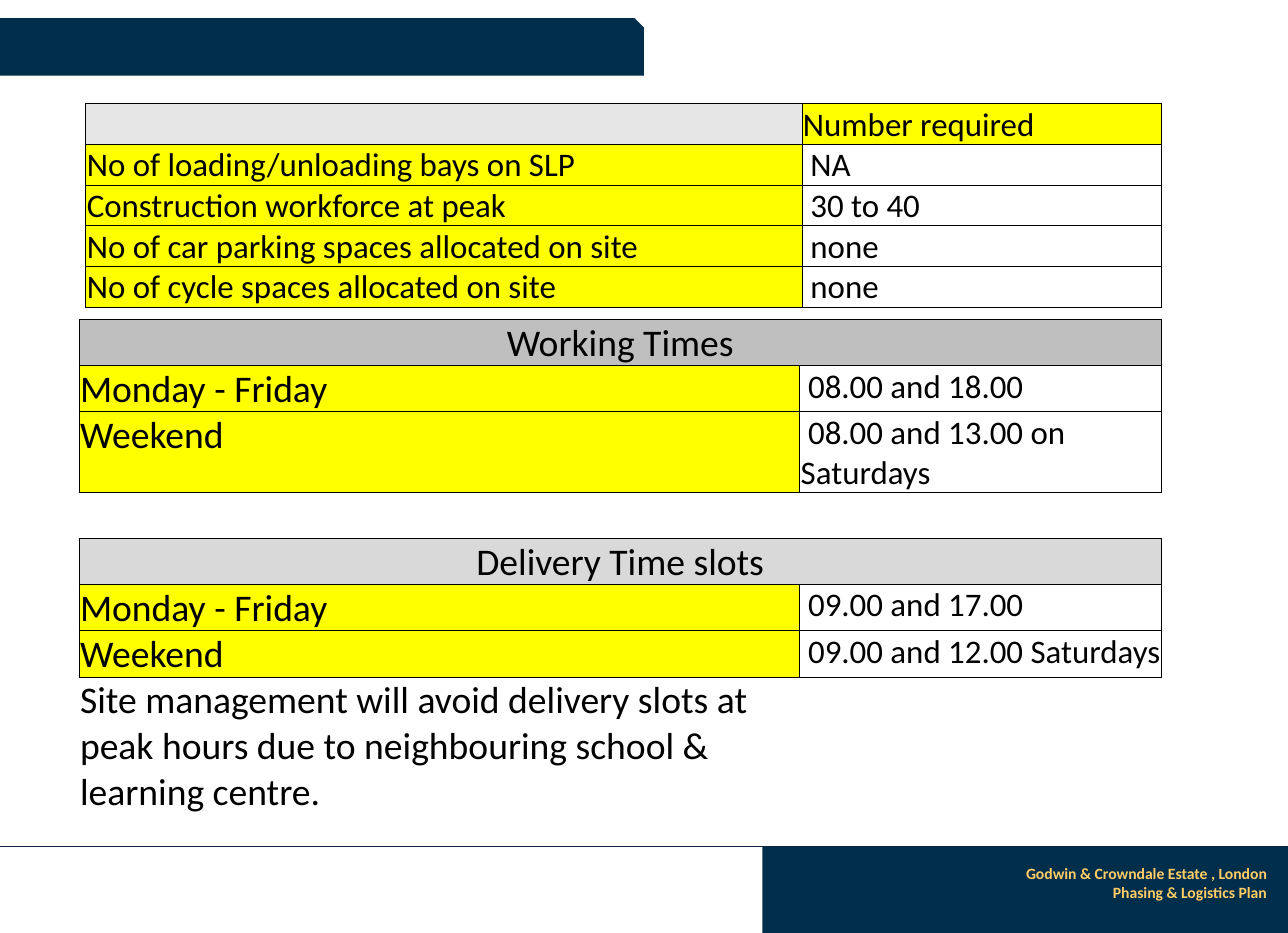
from dataclasses import dataclass

from lxml import etree
from pptx import Presentation
from pptx.dml.color import RGBColor
from pptx.enum import shapes, text
from pptx.oxml import ns
from pptx.util import Inches, Pt


@dataclass(frozen=True)
class Theme:
    """Colours, font and type sizes of the slide."""
    navy: str = "012E4B"
    rule: str = "0F243E"
    gold: str = "FFCC66"
    black: str = "000000"
    yellow: str = "FFFF00"
    white: str = "FFFFFF"
    pale_grey: str = "E7E6E6"
    light_grey: str = "D9D9D9"
    mid_grey: str = "BFBFBF"
    font: str = "Calibri"
    footer: int = 10
    body: int = 21
    large: int = 24


THEME = Theme()


@dataclass(frozen=True)
class Entry:
    """Content and look of one table cell."""
    words: str = ""
    size: int = THEME.body
    fill: str = ""
    align: text.PP_ALIGN = text.PP_ALIGN.LEFT
    anchor: text.MSO_ANCHOR = text.MSO_ANCHOR.TOP
    sides: str = "LRTB"


def add_words(paragraph, words, size, color, align, bold=False):
    """Write one styled run into a paragraph."""
    paragraph.alignment = align
    run = paragraph.add_run()
    run.text = words
    run.font.name, run.font.size, run.font.bold = THEME.font, Pt(size), bold
    run.font.color.rgb = RGBColor.from_string(color)


def add_panel(slide, kind, box):
    """Draw a navy panel without an outline."""
    panel = slide.shapes.add_shape(kind, *map(Inches, box))
    panel.shadow.inherit = False
    panel.fill.solid()
    panel.fill.fore_color.rgb = RGBColor.from_string(THEME.navy)
    panel.line.fill.background()
    return panel


def add_footer(slide, box, lines):
    """Place the footer rule, its navy panel and the plan title."""
    left, top, width, height = box
    panel_left = left + 6.76
    add_panel(slide, shapes.MSO_SHAPE.RECTANGLE,
              (panel_left, top, width - 6.76, height))
    rule = slide.shapes.add_connector(
        shapes.MSO_CONNECTOR.STRAIGHT,
        *map(Inches, (left, top, left + width, top)))
    rule.line.color.rgb = RGBColor.from_string(THEME.rule)
    rule.line.width = Pt(0.75)
    properties = rule._element.spPr
    etree.SubElement(properties, ns.qn("a:effectLst"))
    title = slide.shapes.add_textbox(
        *map(Inches, (panel_left + 0.06, top + 0.11, 4.51, 0.44)))
    frame = title.text_frame
    frame.word_wrap = True
    for index, line in enumerate(lines):
        paragraph = frame.add_paragraph() if index else frame.paragraphs[0]
        add_words(paragraph, line, THEME.footer, THEME.gold,
                  text.PP_ALIGN.RIGHT, bold=True)


def set_borders(cell, sides):
    """Rule the given sides of a cell and clear the others."""
    properties = cell._tc.get_or_add_tcPr()
    for side in "LRTB":
        edge = etree.SubElement(properties, ns.qn(f"a:ln{side}"),
                                w=str(Pt(0.5)))
        if side in sides:
            paint = etree.SubElement(edge, ns.qn("a:solidFill"))
            etree.SubElement(paint, ns.qn("a:srgbClr"), val=THEME.black)
        else:
            etree.SubElement(edge, ns.qn("a:noFill"))


def fill_cell(cell, entry):
    """Give a cell its borders, fill, margins and words."""
    set_borders(cell, entry.sides)
    if entry.fill:
        cell.fill.solid()
        cell.fill.fore_color.rgb = RGBColor.from_string(entry.fill)
    else:
        cell.fill.background()
    cell.margin_left = cell.margin_right = cell.margin_top = Inches(0.01)
    cell.margin_bottom = 0
    cell.vertical_anchor = entry.anchor
    if entry.words:
        add_words(cell.text_frame.paragraphs[0], entry.words, entry.size,
                  THEME.black, entry.align)


def add_grid(slide, origin, widths, heights, rows):
    """Place a table, merging across any row that has a single entry."""
    size = sum(widths), sum(heights)
    table = slide.shapes.add_table(len(rows), len(widths),
                                   *map(Inches, (*origin, *size))).table
    table.first_row = table.horz_banding = False
    for column, width in zip(table.columns, widths):
        column.width = Inches(width)
    for index, (height, entries) in enumerate(zip(heights, rows)):
        table.rows[index].height = Inches(height)
        if len(entries) == 1:
            table.cell(index, 0).merge(table.cell(index, len(widths) - 1))
            entries = [entries[0], Entry(fill=entries[0].fill)]
        for column, entry in enumerate(entries):
            fill_cell(table.cell(index, column), entry)


def add_requirements(slide, origin):
    """Place the table of numbers required on site."""
    bottom = text.MSO_ANCHOR.BOTTOM
    numbers = [
        ("No of loading/unloading bays on SLP", " NA"),
        ("Construction workforce at peak", " 30 to 40"),
        ("No of car parking spaces allocated on site", " none"),
        ("No of cycle spaces allocated on site", " none"),
    ]
    rows = [[Entry(fill=THEME.pale_grey),
             Entry("Number required", fill=THEME.yellow)]]
    rows += [[Entry(label, fill=THEME.yellow, anchor=bottom),
              Entry(number, anchor=bottom)] for label, number in numbers]
    add_grid(slide, origin, (6.35, 3.19), [0.357] * len(rows), rows)


def time_rows(heading, shade, weekday, weekend):
    """Return a heading row and the two rows of hours below it."""
    days = [("Monday - Friday", weekday), ("Weekend", weekend)]
    return [[Entry(heading, THEME.large, shade, text.PP_ALIGN.CENTER)]] + [
        [Entry(day, THEME.large, THEME.yellow), Entry(hours)]
        for day, hours in days]


def add_times(slide, origin):
    """Place the working and delivery times with the closing remark."""
    remark = ("Site management will avoid delivery slots at peak hours "
              "due to neighbouring school & learning centre.")
    rows = [
        *time_rows("Working Times", THEME.mid_grey,
                   " 08.00 and 18.00", " 08.00 and 13.00 on Saturdays"),
        [Entry(fill=THEME.white, sides="TB"), Entry(sides="TB")],
        *time_rows("Delivery Time slots", THEME.light_grey,
                   " 09.00 and 17.00", " 09.00 and 12.00 Saturdays"),
        [Entry(remark, THEME.large, anchor=text.MSO_ANCHOR.BOTTOM, sides="T"),
         Entry(sides="T")],
    ]
    heights = [0.41, 0.41, 0.7, 0.41, 0.41, 0.41, 0.41, 1.2]
    add_grid(slide, origin, (6.39, 3.21), heights, rows)


def main():
    """Build the site logistics slide."""
    deck = Presentation()
    deck.slide_width, deck.slide_height = Inches(11.42), Inches(8.27)
    slide = deck.slides.add_slide(deck.slide_layouts[6])
    add_panel(slide, shapes.MSO_SHAPE.SNIP_1_RECTANGLE, (0, 0.16, 5.71, 0.51))
    add_footer(slide, (0, 7.5, 11.42, 0.77),
               ["Godwin & Crowndale Estate , London",
                "Phasing & Logistics Plan"])
    add_requirements(slide, (0.76, 0.92))
    add_times(slide, (0.7, 2.83))
    deck.save("out.pptx")


if __name__ == "__main__":
    main()
